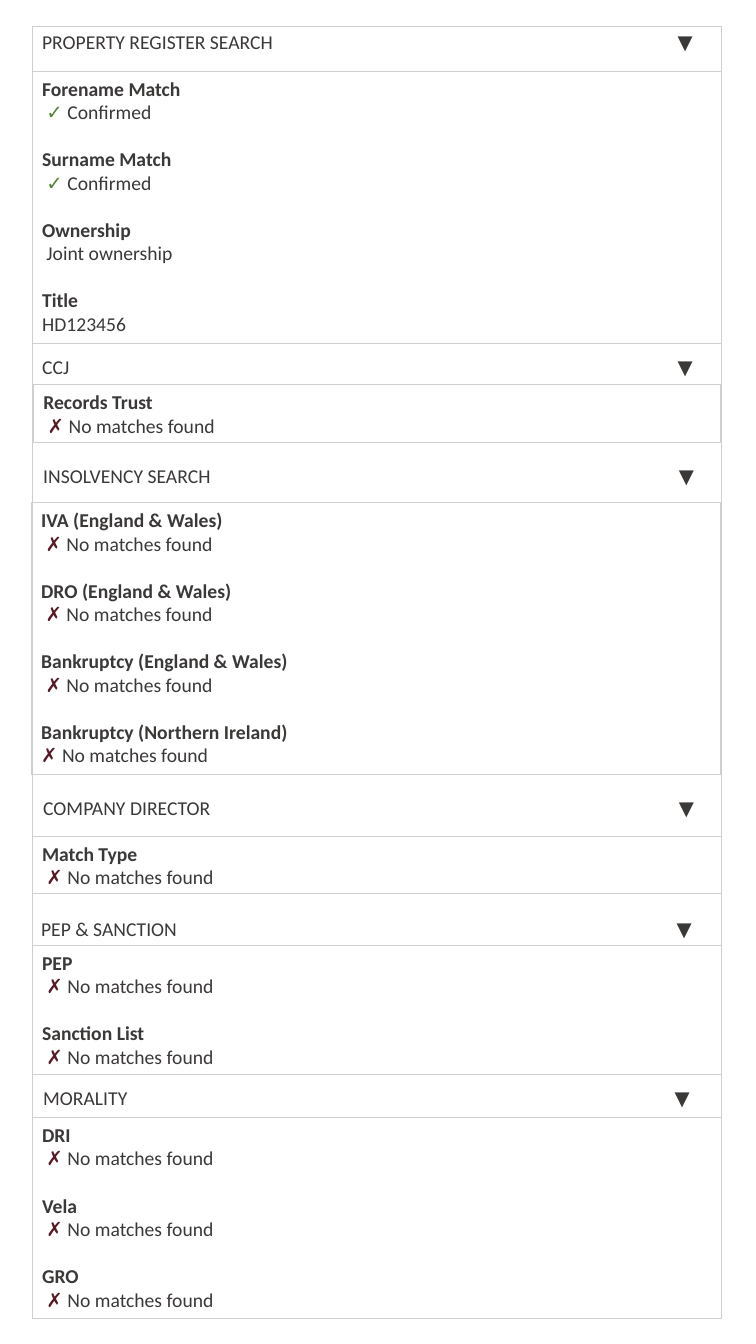
"""Build a one-page slide of identity and credit search results."""
from lxml import etree
from pptx import Presentation
from pptx.dml.color import RGBColor
from pptx.enum import shapes, text
from pptx.oxml import ns
from pptx.util import Pt

HUES = {"ink": "3B3838", "rule": "D0CECE", "✓": "548235", "✗": "551B25"}
YES, NONE = (" ✓ ", "Confirmed"), (" ✗ ", "No matches found")
SECTIONS = [
    {"title": "PROPERTY REGISTER SEARCH", "head": (23, 18), "box": (23, 51.1), "width": 492.5, "tab": 454,
     "items": [("Forename Match", *YES), ("Surname Match", *YES),
               ("Ownership", "", " Joint ownership"), ("Title", "", "HD123456")]},
    {"title": "CCJ", "head": (23, 250.2), "box": (23.8, 275), "width": 491, "tab": 454,
     "items": [("Records Trust", *NONE)]},
    {"title": "INSOLVENCY SEARCH", "head": (23.8, 328), "box": (22.3, 359.3), "width": 492.5, "tab": 454,
     "items": [("IVA (England & Wales)", *NONE), ("DRO (England & Wales)", *NONE),
               ("Bankruptcy (England & Wales)", *NONE),
               ("Bankruptcy (Northern Ireland)", "✗ ", "No matches found")]},
    {"title": "COMPANY DIRECTOR", "head": (23.8, 565), "box": (23, 597.6), "width": 492.5, "tab": 454,
     "items": [("Match Type", *NONE)]},
    {"title": "PEP & SANCTION", "head": (22.3, 651.3), "box": (23, 675.4), "width": 492.5, "tab": 454,
     "items": [("PEP", *NONE), ("Sanction List", *NONE)]},
    {"title": "MORALITY", "head": (23.8, 772.2), "box": (23, 798.5), "width": 492.5, "tab": 451,
     "items": [("DRI", *NONE), ("Vela", *NONE), ("GRO", *NONE)]},
]
LEFT, RIGHT, TOP, BASE = 23, 515.5, 18.7, 911.5
FRAME = [(LEFT, TOP, RIGHT, TOP), (LEFT, TOP, LEFT, BASE), (RIGHT, TOP, RIGHT, BASE)]
ITEM, STEP, GAP = 41, 51, 16.8
BODY = {"word_wrap": True, "vertical_anchor": text.MSO_ANCHOR.TOP}
FONT = {"name": "Calibri", "size": Pt(14)}


def apply(thing, values):
    for key, value in values.items():
        setattr(thing, key, value)


def paint(line, width):
    line.color.rgb = RGBColor.from_string(HUES["rule"])
    line.width = Pt(width)


def write(para, words, hue="ink", bold=False):
    run = para.add_run()
    run.text = words
    apply(run.font, {**FONT, "bold": bold})
    run.font.color.rgb = RGBColor.from_string(HUES[hue])


def add_head(slide, part):
    frame = slide.shapes.add_textbox(*map(Pt, (*part["head"], 493, 24.3))).text_frame
    apply(frame, BODY)
    para = frame.paragraphs[0]
    stops = etree.SubElement(para._p.get_or_add_pPr(), ns.qn("a:tabLst"))
    etree.SubElement(stops, ns.qn("a:tab"), pos=str(Pt(part["tab"])), algn="l")
    write(para, part["title"] + "\t▼")


def add_box(slide, part):
    items = part["items"]
    high = ITEM + STEP * (len(items) - 1)
    box = slide.shapes.add_shape(shapes.MSO_SHAPE.RECTANGLE,
                                 *map(Pt, (*part["box"], part["width"], high)))
    box.shadow.inherit = False
    box.fill.background()
    paint(box.line, 0.75)
    frame = box.text_frame
    apply(frame, BODY)
    for rank, (label, mark, result) in enumerate(items):
        para = frame.add_paragraph() if rank else frame.paragraphs[0]
        apply(para, {"alignment": text.PP_ALIGN.LEFT, "space_before": Pt(GAP if rank else 0)})
        write(para, label, bold=True)
        para = frame.add_paragraph()
        para.alignment = text.PP_ALIGN.LEFT
        if mark:
            write(para, mark, mark.strip())
        write(para, result)


def main():
    deck = Presentation()
    apply(deck, {"slide_width": Pt(540), "slide_height": Pt(960)})
    slide = deck.slides.add_slide(deck.slide_layouts[6])
    for ends in FRAME:
        rule = slide.shapes.add_connector(shapes.MSO_CONNECTOR.STRAIGHT, *map(Pt, ends))
        paint(rule.line, 0.5)
        etree.SubElement(rule._element.spPr, ns.qn("a:effectLst"))
    for part in SECTIONS:
        add_head(slide, part)
        add_box(slide, part)
    deck.save("out.pptx")


if __name__ == "__main__":
    main()
